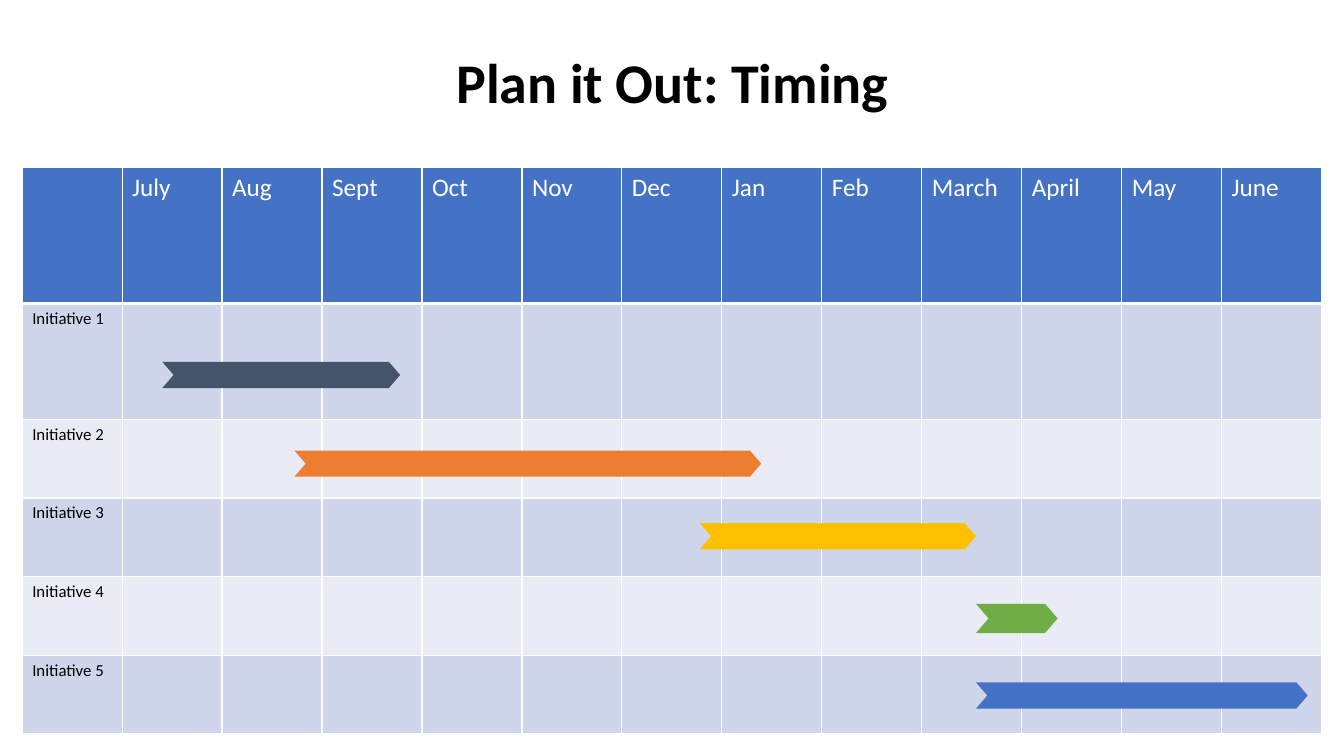
import pptx
import pptx.util
import pptx.oxml
import pptx.dml.color
import pptx.enum.shapes
import pptx.enum.text

Inches = pptx.util.Inches
Pt = pptx.util.Pt
RGB = pptx.dml.color.RGBColor

WHITE = RGB(0xFF, 0xFF, 0xFF)
BLACK = RGB(0, 0, 0)
BLUE = RGB(0x44, 0x72, 0xC4)
DARK = RGB(0xCF, 0xD5, 0xEA)
LIGHT = RGB(0xE9, 0xEB, 0xF5)
SLATE = RGB(0x44, 0x54, 0x6A)
ORANGE = RGB(0xED, 0x7D, 0x31)
GOLD = RGB(0xFF, 0xC0, 0x00)
GREEN = RGB(0x70, 0xAD, 0x47)

FONT = "Calibri"
MONTHS = ["July", "Aug", "Sept", "Oct", "Nov", "Dec",
          "Jan", "Feb", "March", "April", "May", "June"]
HEIGHTS = [1.35, 1.15] + [0.78] * 4
BARS = [
    (1.39, 1.93, 2.36, 0.26, SLATE),
    (2.70, 2.81, 4.63, 0.26, ORANGE),
    (6.72, 3.53, 2.74, 0.26, GOLD),
    (9.46, 4.33, 0.81, 0.29, GREEN),
    (9.46, 5.11, 3.29, 0.26, BLUE),
]
NS = "http://schemas.openxmlformats.org/drawingml/2006/main"


def style(para, size, color, bold):
    font = para.font
    font.name = FONT
    font.size = Pt(size)
    font.bold = bold
    font.color.rgb = color


def add_title(slide, box):
    title = slide.shapes.title
    title.left, title.top, title.width, title.height = map(Inches, box)
    frame = title.text_frame
    frame.text = "Plan it Out: Timing"
    frame.vertical_anchor = pptx.enum.text.MSO_ANCHOR.MIDDLE
    para = frame.paragraphs[0]
    para.alignment = pptx.enum.text.PP_ALIGN.CENTER
    para.line_spacing = 0.9
    style(para, 40, BLACK, True)


def add_edges(cell, bottom):
    props = cell._tc.get_or_add_tcPr()
    for index, (side, width) in enumerate(
            [("L", 1), ("R", 1), ("T", 1), ("B", bottom)]):
        props.insert(index, pptx.oxml.parse_xml(
            f'<a:ln{side} xmlns:a="{NS}" w="{Pt(width)}"><a:solidFill>'
            f'<a:srgbClr val="{WHITE}"/></a:solidFill></a:ln{side}>'))


def add_grid(slide, box):
    cols = len(MONTHS) + 1
    table = slide.shapes.add_table(
        len(HEIGHTS), cols, *map(Inches, box)).table
    for col in table.columns:
        col.width = Inches(box[2] / cols)
    for index, height in enumerate(HEIGHTS):
        table.rows[index].height = Inches(height)
        head = index == 0
        texts = [""] + MONTHS if head else [f"Initiative {index}"]
        fill = BLUE if head else DARK if index % 2 else LIGHT
        for pos, cell in enumerate(table.rows[index].cells):
            cell.fill.solid()
            cell.fill.fore_color.rgb = fill
            add_edges(cell, 3 if head else 1)
            if pos < len(texts) and texts[pos]:
                cell.text = texts[pos]
                style(cell.text_frame.paragraphs[0], 18 if head else 12,
                      WHITE if head else BLACK, False)


def add_bars(slide, box):
    for left, top, width, height, color in BARS:
        bar = slide.shapes.add_shape(
            pptx.enum.shapes.MSO_SHAPE.CHEVRON,
            Inches(box[0] + left), Inches(box[1] + top),
            Inches(width), Inches(height))
        bar.adjustments[0] = 0.432
        bar.shadow.inherit = False
        bar.fill.solid()
        bar.fill.fore_color.rgb = color
        bar.line.fill.background()


def main():
    deck = pptx.Presentation()
    deck.slide_width = Inches(13.33)
    deck.slide_height = Inches(7.5)
    slide = deck.slides.add_slide(deck.slide_layouts[5])
    chart = (0.22, 1.66, 12.89, 5.61)
    add_title(slide, (0.92, 0.12, 11.5, 1.45))
    add_grid(slide, chart)
    add_bars(slide, chart)
    deck.save("out.pptx")


if __name__ == "__main__":
    main()
